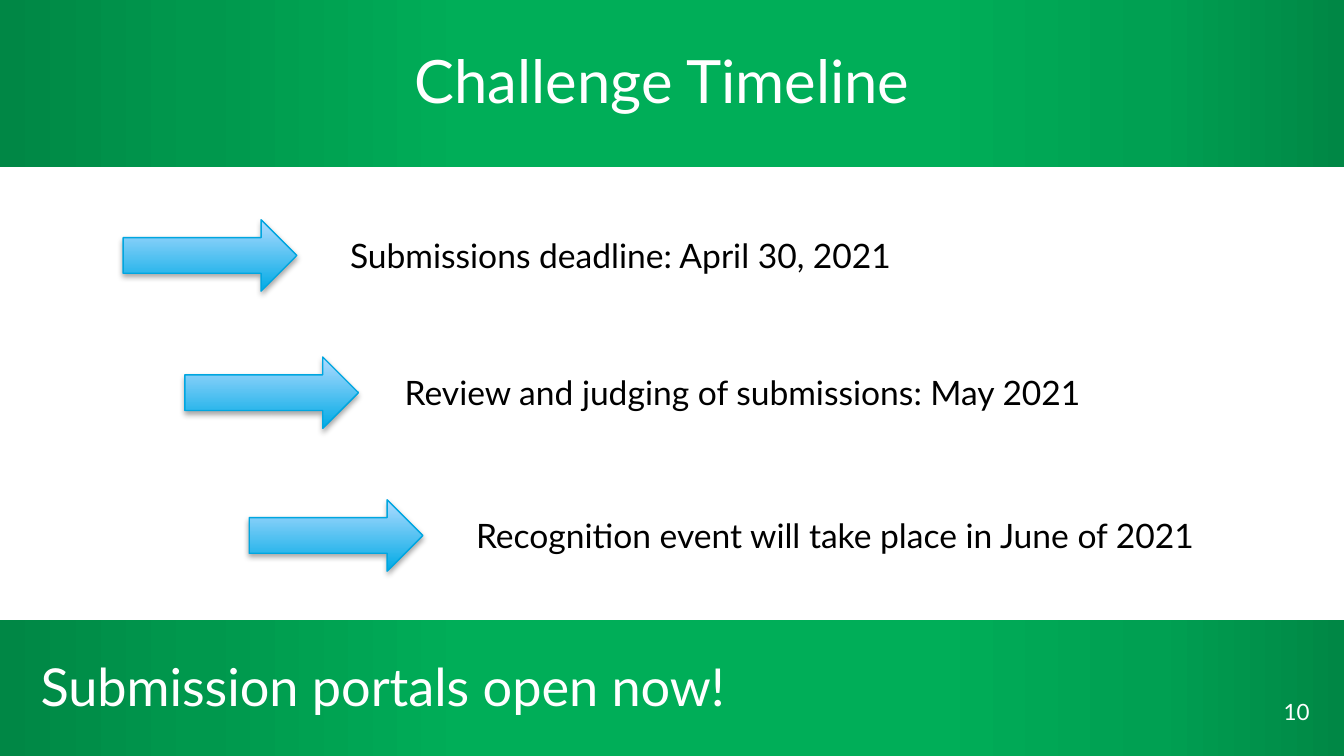
from dataclasses import dataclass

from lxml import etree
from pptx import Presentation
from pptx.dml.color import RGBColor
from pptx.enum.shapes import MSO_SHAPE
from pptx.enum.text import MSO_ANCHOR, MSO_AUTO_SIZE
from pptx.oxml.ns import qn
from pptx.util import Pt

RECT, ARROW = MSO_SHAPE.RECTANGLE, MSO_SHAPE.RIGHT_ARROW
TOP, MIDDLE = MSO_ANCHOR.TOP, MSO_ANCHOR.MIDDLE
GROW, FIXED = MSO_AUTO_SIZE.SHAPE_TO_FIT_TEXT, MSO_AUTO_SIZE.NONE
SCALE = 9525


@dataclass(frozen=True)
class Theme:
    """Colours, font and type sizes of the slide."""
    font: str = "Lato"
    light: str = "FFFFFF"
    dark: str = "000000"
    edge: str = "00A6E0"
    green: tuple = ((0, "008745"), (15, "00984D"), (35, "00AE58"),
                    (69, "00AE58"), (86, "00A052"), (100, "008745"))
    blue: tuple = ((0, "00AAE5"), (100, "B0DBFF"))
    title: int = 32
    call: int = 28
    label: int = 18
    number: int = 12


def px(*vals):
    """Turn px into EMU."""
    return [val * SCALE for val in vals]


def add(node, tag, **attrs):
    """Append a child element with its attributes."""
    return etree.SubElement(node, qn(tag), {key: str(val) for key, val in attrs.items()})


class Board:
    """Draws styled elements on the current slide."""

    def __init__(self, slide, theme):
        """Keep the slide and the theme."""
        self.slide, self.theme = slide, theme

    def shape(self, kind, box, stops, angle):
        """Add a preset shape with a gradient fill."""
        shape = self.slide.shapes.add_shape(kind, *px(*box))
        shape.shadow.inherit = False
        shape.fill.gradient()
        shape.fill.gradient_angle = angle
        ramp = shape._element.spPr.find(".//" + qn("a:gsLst"))
        for old in list(ramp):
            ramp.remove(old)
        for pos, color in stops:
            add(add(ramp, "a:gs", pos=pos * 1000), "a:srgbClr", val=color)
        return shape

    def band(self, top, height):
        """Add a full-width green band."""
        shape = self.shape(RECT, (0, top, 960, height), self.theme.green, 0)
        shape.line.fill.background()

    def arrow(self, left, top):
        """Add a blue arrow with a soft shadow."""
        shape = self.shape(ARROW, (left, top, 124, 51), self.theme.blue, 90)
        shape.line.color.rgb = RGBColor.from_string(self.theme.edge)
        shape.line.width = Pt(0.75)
        effect = shape._element.spPr.find(qn("a:effectLst"))
        shade = add(effect, "a:outerShdw", blurRad=Pt(3.1), dist=Pt(1.8),
                    dir=5400000, rotWithShape=0)
        add(add(shade, "a:srgbClr", val=self.theme.dark), "a:alpha", val=35000)

    def text(self, words, box, size, color, inset=(10, 5, 10, 5),
             anchor=TOP, fit=GROW, space=1.0):
        """Add a text box of one paragraph."""
        frame = self.slide.shapes.add_textbox(*px(*box)).text_frame
        left, top, right, bottom = px(*inset)
        form = {"word_wrap": True, "auto_size": fit, "vertical_anchor": anchor,
                "margin_left": left, "margin_top": top,
                "margin_right": right, "margin_bottom": bottom}
        for key, val in form.items():
            setattr(frame, key, val)
        para = frame.paragraphs[0]
        para.line_spacing = space
        run = para.add_run()
        run.text = words
        for key, val in {"name": self.theme.font, "size": Pt(size)}.items():
            setattr(run.font, key, val)
        run.font.color.rgb = RGBColor.from_string(color)


def main():
    """Build and save the slide."""
    deck = Presentation()
    deck.slide_width, deck.slide_height = px(960, 540)
    theme = Theme()
    board = Board(deck.slides.add_slide(deck.slide_layouts[6]), theme)

    board.band(0, 119)
    board.band(443, 97)
    board.text("Submission portals open now!", (0, 443, 960, 97), theme.call,
               theme.light, (29, 5, 19, 0), MIDDLE, FIXED, 0.8)
    board.text("10", (917, 494, 43, 29), theme.number, theme.light,
               (0, 0, 0, 0), MIDDLE, FIXED)
    board.text("Challenge Timeline", (286, 26, 524, 61), theme.title, theme.light)

    steps = [
        (88, 240, 157, "Submissions deadline: April 30, 2021"),
        (132, 279, 255, "Review and judging of submissions: May 2021"),
        (178, 330, 357, "Recognition event will take place in June of 2021"),
    ]
    for left, start, top, words in steps:
        board.arrow(left, top)
        board.text(words, (start, top + 6, 587, 38), theme.label, theme.dark)

    deck.save("out.pptx")


if __name__ == "__main__":
    main()
